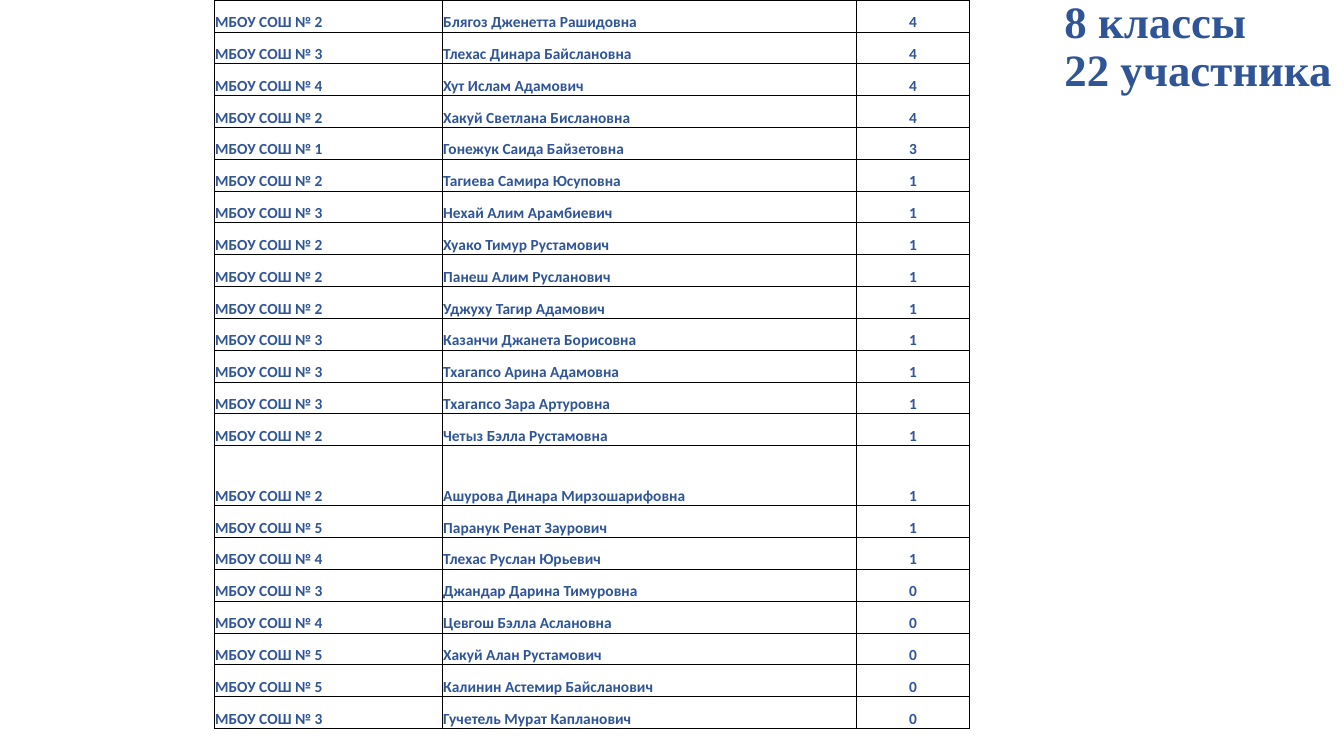
from dataclasses import dataclass

from lxml.etree import SubElement
from pptx import Presentation
from pptx.dml.color import RGBColor
from pptx.enum.text import MSO_ANCHOR as Anchor, MSO_AUTO_SIZE as AutoSize, PP_ALIGN as Align
from pptx.oxml.ns import qn
from pptx.util import Cm, Pt

TITLE_LINES = ("8 классы", "22 участника")
SCHOOL = "МБОУ СОШ № {}"
RESULTS = [  # school number, pupil, score
    (2, "Блягоз Дженетта Рашидовна", 4),
    (3, "Тлехас Динара Байслановна", 4),
    (4, "Хут Ислам Адамович", 4),
    (2, "Хакуй Светлана Бислановна", 4),
    (1, "Гонежук Саида Байзетовна", 3),
    (2, "Тагиева Самира Юсуповна", 1),
    (3, "Нехай Алим Арамбиевич", 1),
    (2, "Хуако Тимур Рустамович", 1),
    (2, "Панеш Алим Русланович", 1),
    (2, "Уджуху Тагир Адамович", 1),
    (3, "Казанчи Джанета Борисовна", 1),
    (3, "Тхагапсо Арина Адамовна", 1),
    (3, "Тхагапсо Зара Артуровна", 1),
    (2, "Четыз Бэлла Рустамовна", 1),
    (2, "Ашурова Динара Мирзошарифовна", 1),
    (5, "Паранук Ренат Заурович", 1),
    (4, "Тлехас Руслан Юрьевич", 1),
    (3, "Джандар Дарина Тимуровна", 0),
    (4, "Цевгош Бэлла Аслановна", 0),
    (5, "Хакуй Алан Рустамович", 0),
    (5, "Калинин Астемир Байсланович", 0),
    (3, "Гучетель Мурат Капланович", 0),
]
TALL_ROW = 14
TALL_HEIGHT = Cm(1.51)
TABLE_LEFT, TABLE_HEIGHT = Cm(5.4), Cm(18.36)
COLUMN_WIDTHS = (Cm(5.75), Cm(10.44), Cm(2.84))
ALIGNMENTS = (Align.LEFT, Align.LEFT, Align.CENTER)


@dataclass(frozen=True)
class Theme:
    text: RGBColor = RGBColor(0x2F, 0x55, 0x97)
    border: str = "000000"
    border_width: int = Pt(0.5)
    title_font: str = "Times New Roman"
    title_size: int = Pt(32)
    table_font: str = "Calibri"
    table_size: int = Pt(11)


THEME = Theme()


def add_run(paragraph, text, font_name, size):
    run = paragraph.add_run()
    run.text = text
    run.font.name = font_name
    run.font.size = size
    run.font.bold = True
    run.font.color.rgb = THEME.text


def add_borders(cell):
    properties = cell._tc.get_or_add_tcPr()
    for position, side in enumerate(("a:lnL", "a:lnR", "a:lnT", "a:lnB")):
        line = SubElement(properties, qn(side), w=str(THEME.border_width))
        fill = SubElement(line, qn("a:solidFill"))
        SubElement(fill, qn("a:srgbClr"), val=THEME.border)
        properties.insert(position, line)  # borders come before the fill


def fill_cell(cell, text, alignment):
    cell.margin_left = cell.margin_right = cell.margin_top = Cm(0.02)
    cell.margin_bottom = 0
    cell.vertical_anchor = Anchor.BOTTOM
    cell.fill.background()
    add_borders(cell)
    paragraph = cell.text_frame.paragraphs[0]
    paragraph.alignment = alignment
    add_run(paragraph, text, THEME.table_font, THEME.table_size)


def add_title(slide):
    title = slide.shapes.title
    title.left, title.top, title.width, title.height = Cm(26.57), 0, Cm(7.3), Cm(2.41)
    frame = title.text_frame
    frame.word_wrap = True
    frame.auto_size = AutoSize.NONE
    frame.vertical_anchor = Anchor.MIDDLE
    paragraph = frame.paragraphs[0]
    paragraph.alignment = Align.LEFT
    paragraph.line_spacing = 0.9
    for index, line in enumerate(TITLE_LINES):
        if index:
            paragraph.add_line_break()
        add_run(paragraph, line, THEME.title_font, THEME.title_size)


def add_results(slide):
    table = slide.shapes.add_table(
        len(RESULTS), len(COLUMN_WIDTHS), TABLE_LEFT, 0, sum(COLUMN_WIDTHS), TABLE_HEIGHT
    ).table
    table.first_row = table.horz_banding = False
    for column, width in zip(table.columns, COLUMN_WIDTHS):
        column.width = width
    row_height = (TABLE_HEIGHT - TALL_HEIGHT) // (len(RESULTS) - 1)
    for index, (school, pupil, score) in enumerate(RESULTS):
        row = table.rows[index]
        row.height = TALL_HEIGHT if index == TALL_ROW else row_height
        texts = (SCHOOL.format(school), pupil, str(score))
        for cell, text, alignment in zip(row.cells, texts, ALIGNMENTS):
            fill_cell(cell, text, alignment)


def main():
    presentation = Presentation()
    presentation.slide_width, presentation.slide_height = Cm(33.87), Cm(19.05)
    slide = presentation.slides.add_slide(presentation.slide_layouts[5])
    add_title(slide)
    add_results(slide)
    presentation.save("out.pptx")


if __name__ == "__main__":
    main()
